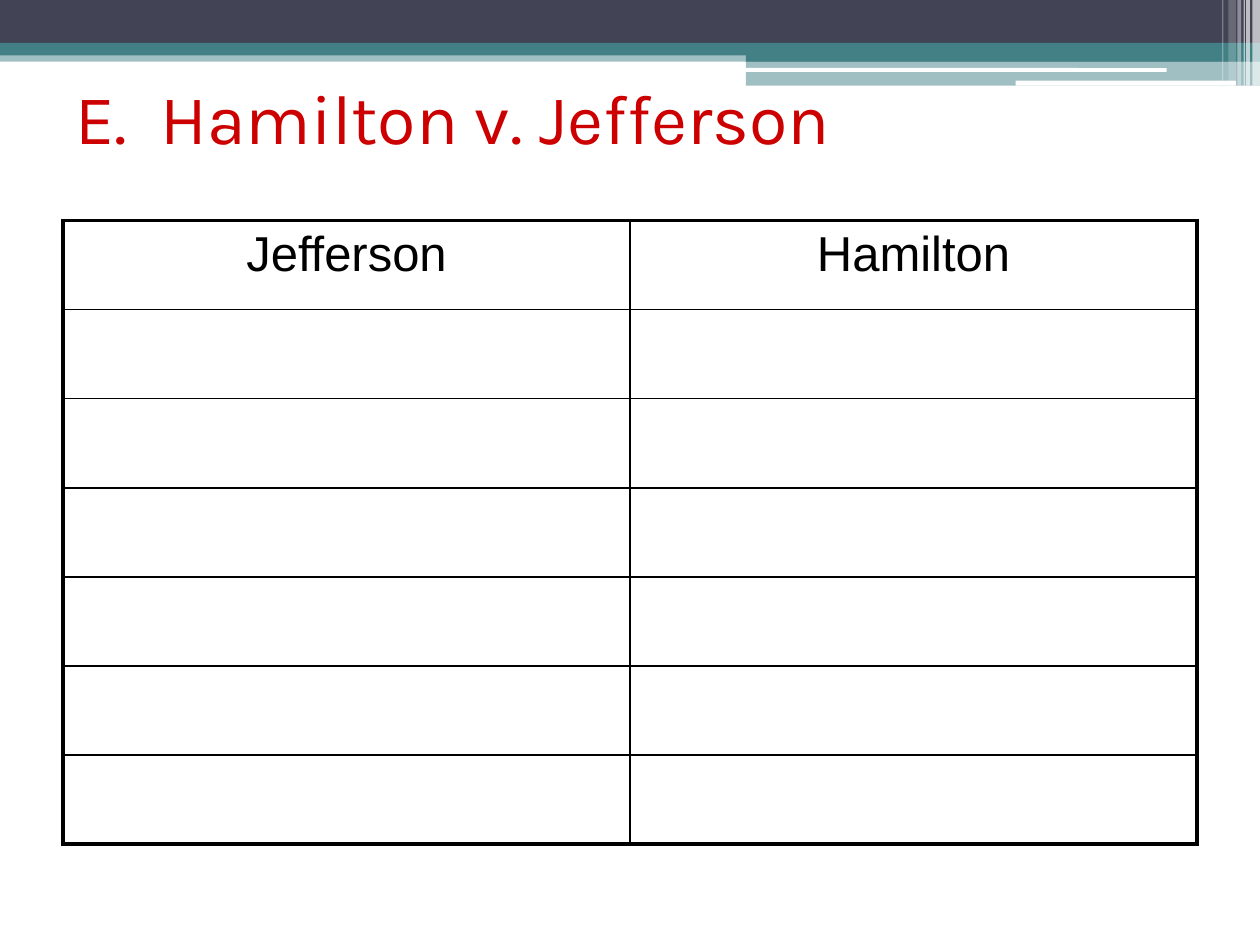
import pptx
import pptx.util
import pptx.dml.color
import pptx.enum.shapes
import pptx.enum.text
import pptx.oxml.ns
from lxml import etree

Inches, Pt = pptx.util.Inches, pptx.util.Pt
SHAPE = pptx.enum.shapes.MSO_SHAPE

# Content
TITLE = "E.  Hamilton v. Jefferson"
HEADINGS = ["Jefferson", "Hamilton"]
BLANK_ROWS = 6

SLATE, TEAL, WHITE, BLACK, RED = "424456", "438086", "FFFFFF", "000000", "CC0000"

# Header bands: left, top, width, height, colour, opacity in percent
BANDS = [
    (0, 0.4, 10, 0.09, TEAL, 50),
    (0, 0, 10, 0.34, SLATE, 100),
    (0, 0.34, 10, 0.1, TEAL, 100),
    (5.92, 0.39, 4.08, 0.1, TEAL, 100),
    (5.92, 0.48, 4.08, 0.2, TEAL, 50),
]
# Rounded white strips: left, top, width, height
STRIPS = [(5.91, 0.54, 3.35, 0.03), (8.06, 0.64, 1.75, 0.04)]
# Pale vertical stripes: left, width, height, opacity in percent
STRIPES = [
    (9.94, 0.06, 0.68, 65),
    (9.89, 0.03, 0.68, 65),
    (9.87, 0.01, 0.68, 60),
    (9.82, 0.03, 0.68, 40),
    (9.75, 0.06, 0.64, 20),
    (9.7, 0.01, 0.64, 30),
]

TABLE_LEFT, TABLE_TOP, TABLE_WIDTH, TABLE_HEIGHT = 0.5, 1.75, 9, 4.95
OUTER_LINE, INNER_LINE = 2.25, 1


def rgb(colour):
    return pptx.dml.color.RGBColor.from_string(colour)


def add_element(parent, tag, **attributes):
    return etree.SubElement(parent, pptx.oxml.ns.qn(tag), attributes)


def add_bar(page, left, top, width, height, colour, opacity=100, kind=SHAPE.RECTANGLE):
    bar = page.shapes.add_shape(kind, Inches(left), Inches(top), Inches(width), Inches(height))
    bar.shadow.inherit = False
    bar.line.fill.background()
    bar.fill.solid()
    bar.fill.fore_color.rgb = rgb(colour)
    if opacity < 100:
        fill_colour = bar.fill._xPr.find(".//" + pptx.oxml.ns.qn("a:srgbClr"))
        add_element(fill_colour, "a:alpha", val=str(opacity * 1000))
    return bar


def add_text(para, text, size, font, colour):
    span = para.add_run()
    span.text = text
    span.font.size = Pt(size)
    span.font.name = font
    span.font.color.rgb = rgb(colour)


def set_borders(cell, widths):
    properties = cell._tc.get_or_add_tcPr()
    for side, width in widths.items():
        line = add_element(properties, "a:ln" + side, w=str(Pt(width)))
        add_element(add_element(line, "a:solidFill"), "a:srgbClr", val=BLACK)


def add_comparison_table(page):
    row_count, column_count = BLANK_ROWS + 1, len(HEADINGS)
    frame = page.shapes.add_table(row_count, column_count, Inches(TABLE_LEFT), Inches(TABLE_TOP),
                                  Inches(TABLE_WIDTH), Inches(TABLE_HEIGHT))
    table = frame.table
    table.first_row = table.horz_banding = False
    for column in table.columns:
        column.width = Inches(TABLE_WIDTH / column_count)
    for row in table.rows:
        row.height = Inches(TABLE_HEIGHT / row_count)

    for row in range(row_count):
        for column in range(column_count):
            cell = table.cell(row, column)
            on_edge = {"L": column == 0, "R": column == column_count - 1,
                       "T": row == 0, "B": row == row_count - 1}
            set_borders(cell, {side: OUTER_LINE if edge else INNER_LINE
                               for side, edge in on_edge.items()})
            cell.fill.background()

    for column, heading in enumerate(HEADINGS):
        para = table.cell(0, column).text_frame.paragraphs[0]
        para.alignment = pptx.enum.text.PP_ALIGN.CENTER
        spacing = add_element(para._p.get_or_add_pPr(), "a:spcBef")
        add_element(spacing, "a:spcPct", val="20000")
        add_text(para, heading, 28, "Arial", BLACK)


def main():
    deck = pptx.Presentation()
    deck.slide_width, deck.slide_height = Inches(10), Inches(7.5)
    page = deck.slides.add_slide(deck.slide_layouts[5])

    # Header decoration
    for band in BANDS:
        add_bar(page, *band)
    for strip in STRIPS:
        add_bar(page, *strip, WHITE, kind=SHAPE.ROUNDED_RECTANGLE)
    for left, width, height, opacity in STRIPES:
        add_bar(page, left, 0, width, height, WHITE, opacity)

    # Title
    title = page.shapes.title
    title.left, title.top = Inches(0.5), Inches(0.3)
    title.width, title.height = Inches(9), Inches(1.25)
    title.text_frame.vertical_anchor = pptx.enum.text.MSO_ANCHOR.MIDDLE
    para = title.text_frame.paragraphs[0]
    para.alignment = pptx.enum.text.PP_ALIGN.LEFT
    add_text(para, TITLE, 40, "Karla", RED)

    # Comparison table
    add_comparison_table(page)

    deck.save("out.pptx")


if __name__ == "__main__":
    main()
